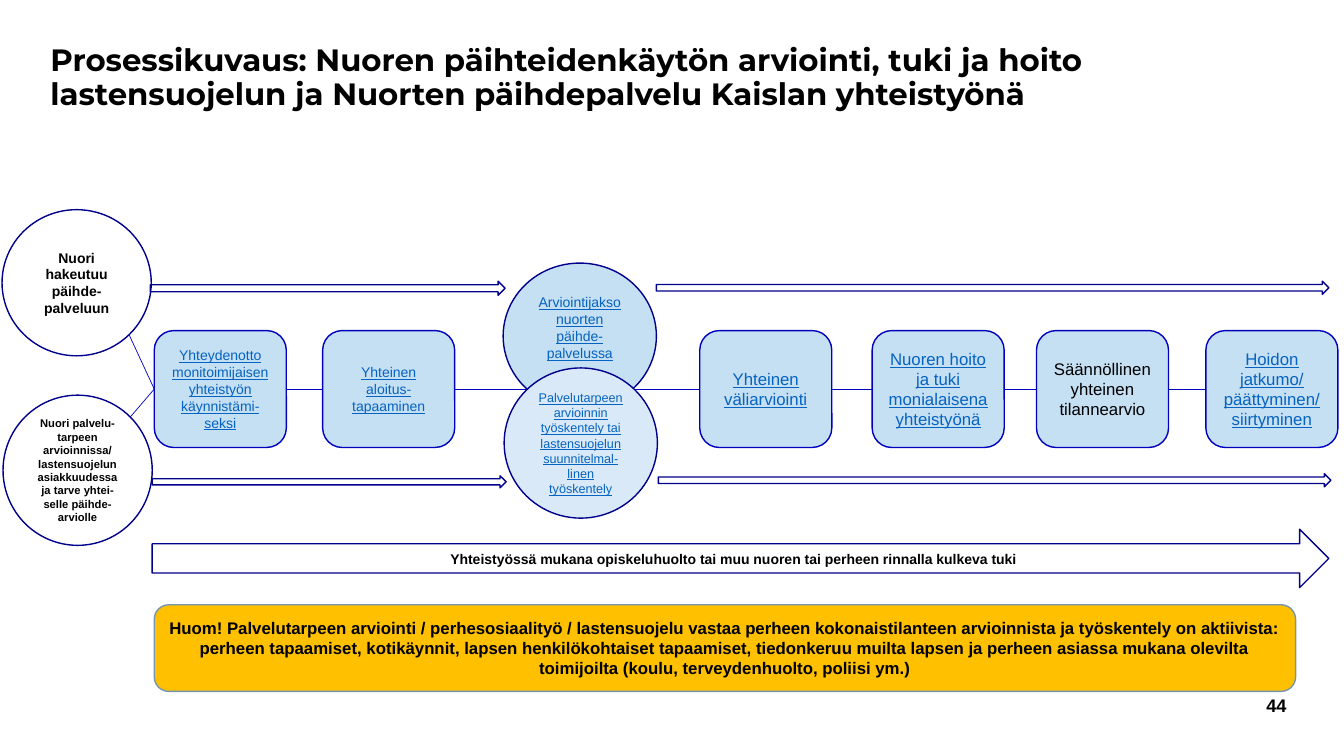
from pptx import Presentation
from pptx import util as u
from pptx.dml.color import RGBColor
from pptx.enum import shapes, text
from pptx.oxml.ns import qn
from lxml import etree

PX = 9144  # 100 px to the inch
COLORS = {
    "black": "000000", "white": "FFFFFF", "link": "0563C1",
    "box": "C5DFF3", "pale": "D9E9F7", "note": "FFC000",
    "blue": "0000BF", "navy": "00008D", "steel": "7695AE",
}
KIND = shapes.MSO_SHAPE


def rgb(name):
    return RGBColor.from_string(COLORS[name])


def write(sp, paragraphs, size, color="black", bold=False, font="Arial",
          align=text.PP_ALIGN.CENTER, anchor=text.MSO_ANCHOR.MIDDLE):
    tf = sp.text_frame
    tf.word_wrap = True
    tf.vertical_anchor = anchor
    for i, words in enumerate(paragraphs):
        p = tf.paragraphs[0] if i == 0 else tf.add_paragraph()
        p.alignment = align
        r = p.add_run()
        r.text = words
        r.font.name, r.font.size, r.font.bold = font, u.Pt(size), bold
        r.font.underline = color == "link"
        r.font.color.rgb = rgb(color)


prs = Presentation()
prs.slide_width, prs.slide_height = 1333 * PX, 750 * PX
s = prs.slides.add_slide(prs.slide_layouts[6])

# Title and page number
labels = [
    ((50, 45, 1091, 86), "Prosessikuvaus: Nuoren päihteidenkäytön arviointi, tuki ja hoito "
     "lastensuojelun ja Nuorten päihdepalvelu Kaislan yhteistyönä",
     22, "Montserrat", text.PP_ALIGN.LEFT, text.MSO_ANCHOR.TOP),
    ((1141, 686, 135, 28), "44", 13, "Arial", text.PP_ALIGN.RIGHT, text.MSO_ANCHOR.MIDDLE),
]
for place, words, size, font, align, anchor in labels:
    sp = s.shapes.add_textbox(*[v * PX for v in place])
    tf = sp.text_frame
    tf.margin_left = tf.margin_right = tf.margin_top = tf.margin_bottom = 0
    write(sp, [words], size, bold=True, font=font, align=align, anchor=anchor)
    tf.paragraphs[0].line_spacing = 0.9 if font == "Montserrat" else 1.0

# Process steps, left to right
BOX_TOP, BOX_W, BOX_H = 328, 131, 116
steps = [
    (153, "Yhteydenotto monitoimijaisen yhteistyön käynnistämi-seksi", 10, "link"),
    (320, "Yhteinen aloitus-tapaaminen", 10, "link"),
    (694, "Yhteinen väliarviointi", 12, "link"),
    (865, "Nuoren hoito ja tuki monialaisena yhteistyönä", 12, "link"),
    (1028, "Säännöllinen yhteinen tilannearvio", 12, "black"),
    (1196, "Hoidon jatkumo/ päättyminen/ siirtyminen", 12, "link"),
]
# Each part: kind, place, fill, line, paragraphs, size, text colour, bold
parts = [(KIND.ROUNDED_RECTANGLE, (x, BOX_TOP, BOX_W, BOX_H), "box", "blue",
          [words], size, color, False) for x, words, size, color in steps]

# Circles: two ways in, two assessments
parts += [
    (KIND.OVAL, (2, 208, 148, 145), "white", "navy",
     ["Nuori hakeutuu päihde-palveluun"], 10, "black", True),
    (KIND.OVAL, (3, 392, 148, 149), None, "navy",
     ["Nuori palvelu-tarpeen arvioinnissa/ lastensuojelun asiakkuudessa "
      "ja tarve yhtei-selle päihde-arviolle"], 8, "black", True),
    (KIND.OVAL, (499, 261, 152, 145), "box", "navy",
     ["Arviointijakso nuorten päihde-palvelussa"], 10, "link", False),
    (KIND.OVAL, (500, 365, 152, 149), "pale", "navy",
     ["Palvelutarpeen arvioinnin työskentely tai lastensuojelun "
      "suunnitelmal-linen työskentely"], 9, "link", False),
]

# Thin arrows above and below the steps
thin_arrows = [(151, 472, 351, 12), (149, 279, 352, 14), (651, 279, 667, 13), (653, 470, 667, 13)]
parts += [(KIND.RIGHT_ARROW, place, None, "navy", [], 10, "black", False)
          for place in thin_arrows]

# Wide support arrow and the note
parts += [
    (KIND.RIGHT_ARROW, (151, 525, 1167, 58), None, "navy",
     ["Yhteistyössä mukana opiskeluhuolto tai muu nuoren tai perheen rinnalla kulkeva tuki"],
     10, "black", True),
    (KIND.ROUNDED_RECTANGLE, (153, 600, 1132, 86), "note", "steel",
     ["Huom! Palvelutarpeen arviointi / perhesosiaalityö / lastensuojelu vastaa perheen "
      "kokonaistilanteen arvioinnista ja työskentely on aktiivista:",
      "perheen tapaamiset, kotikäynnit, lapsen henkilökohtaiset tapaamiset, tiedonkeruu muilta "
      "lapsen ja perheen asiassa mukana olevilta toimijoilta (koulu, terveydenhuolto, poliisi ym.)"],
     12, "black", True),
]

drawn = []
for kind, place, fill, line, paragraphs, size, color, bold in parts:
    sp = s.shapes.add_shape(kind, *[v * PX for v in place])
    sp.shadow.inherit = False
    if fill:
        sp.fill.solid()
        sp.fill.fore_color.rgb = rgb(fill)
    else:
        sp.fill.background()
    sp.line.color.rgb = rgb(line)
    sp.line.width = u.Pt(1)
    write(sp, paragraphs, size, color, bold)
    drawn.append(sp)

# Keep the upper assessment text clear of the circle that overlaps it
boxes = drawn[:len(steps)]
upper_assessment = drawn[len(steps) + 2]
upper_assessment.text_frame.margin_bottom = 22 * PX

# Connecting lines: start and end are a step number or a free point
MID = BOX_TOP + BOX_H // 2
links = [((128, 332), 0), ((129, 414), 0), (0, 1), (1, (522, MID)),
         ((630, MID), 2), (2, 3), (3, 4), (4, 5)]
for start, end in links:
    x1, y1 = start if isinstance(start, tuple) else (steps[start][0] + BOX_W, MID)
    x2, y2 = end if isinstance(end, tuple) else (steps[end][0], MID)
    line = s.shapes.add_connector(shapes.MSO_CONNECTOR.STRAIGHT,
                                  x1 * PX, y1 * PX, x2 * PX, y2 * PX)
    if isinstance(start, int):
        line.begin_connect(boxes[start], 3)
    if isinstance(end, int):
        line.end_connect(boxes[end], 1)
    line.line.color.rgb = rgb("blue")
    line.line.width = u.Pt(0.5)
    etree.SubElement(line._element.spPr, qn("a:effectLst"))

prs.save("out.pptx")
